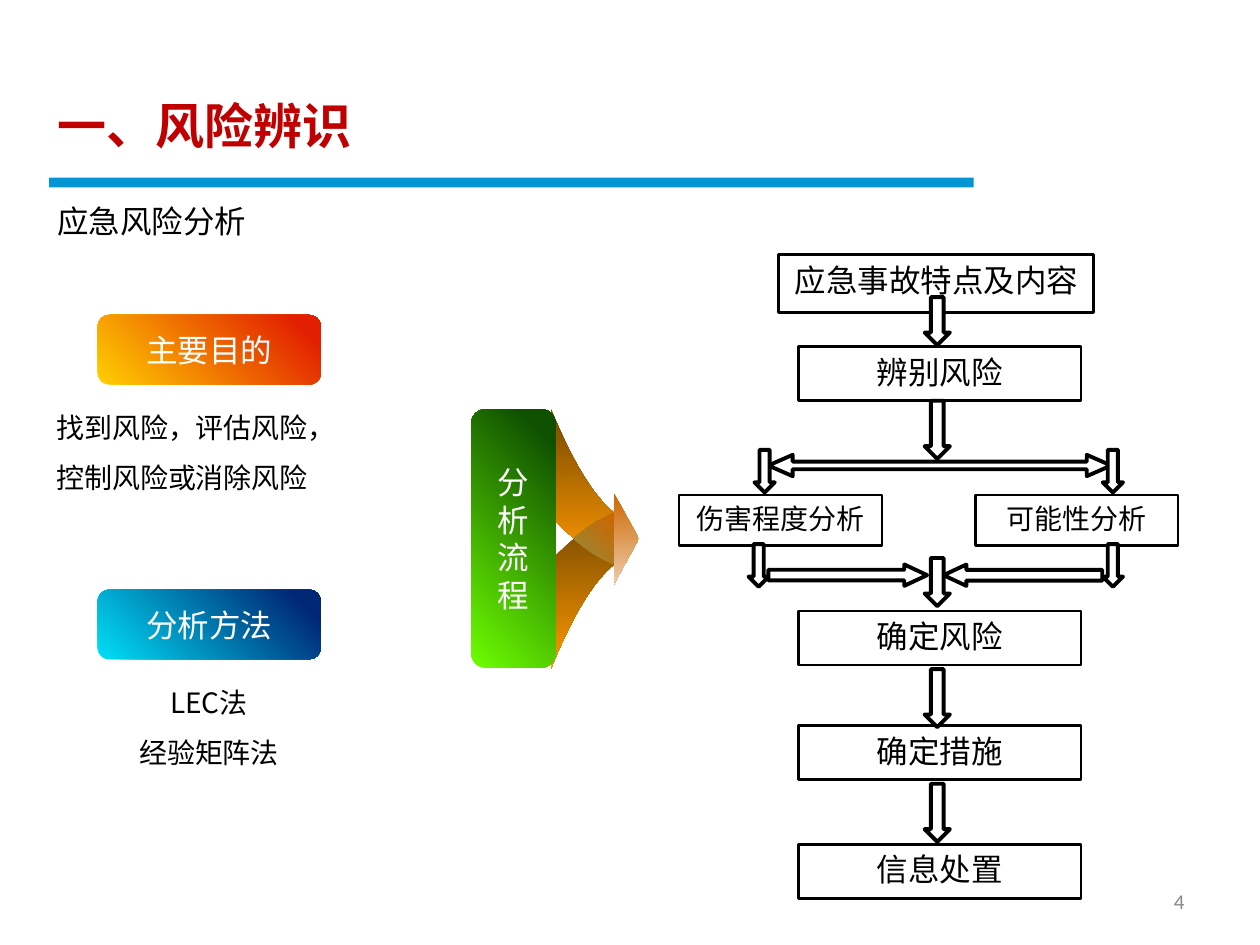
import pptx
import pptx.dml.color
import pptx.enum.shapes
import pptx.enum.text
import pptx.util
from lxml import etree

Cm = pptx.util.Cm
Pt = pptx.util.Pt
MSO_SHAPE = pptx.enum.shapes.MSO_SHAPE
ALIGN = pptx.enum.text.PP_ALIGN
ANCHOR = pptx.enum.text.MSO_ANCHOR

SANS = "Noto Sans CJK SC"
COLORS = {
    "title": "C00000", "bar": "0595D4", "text": "000000", "white": "FFFFFF",
    "number": "898989", "yellow": "FFCF01", "red": "E22000", "cyan": "00DFF6",
    "navy": "002774", "lime": "6EFF01", "green": "0F5000", "brown": "744700",
    "orange": "FF9900", "rust": "CC6600", "sand": "EECDAB", "olive": "948C3C",
}


def rgb(name):
    """Return the named colour."""
    return pptx.dml.color.RGBColor.from_string(COLORS[name])


def write(sp, text, size, color="text", font=SANS, align=ALIGN.CENTER,
          anchor=ANCHOR.TOP, bold=False, spacing=None, wrap=True):
    """Set the text of a shape and format all of it."""
    tf = sp.text_frame
    tf.text = text
    tf.word_wrap = wrap
    tf.auto_size = pptx.enum.text.MSO_AUTO_SIZE.NONE
    tf.vertical_anchor = anchor
    for p in tf.paragraphs:
        p.alignment = align
        if spacing:
            p.line_spacing = spacing
        for r in p.runs:
            r.font.size, r.font.bold, r.font.name = Pt(size), bold, font
            r.font.color.rgb = rgb(color)
            rPr = r.font._element
            ea = etree.SubElement(rPr, pptx.oxml.ns.qn("a:ea"))
            ea.set("typeface", SANS)


def add_text(s, box, text, size, **style):
    """Add a formatted text box."""
    sp = s.shapes.add_textbox(*map(Cm, box))
    write(sp, text, size, **style)


def add_shape(s, kind, box, fill=None, line=None, adj=()):
    """Add a preset shape with an optional fill and black outline."""
    sp = s.shapes.add_shape(kind, *map(Cm, box))
    sp.shadow.inherit = False
    for i, value in enumerate(adj):
        sp.adjustments[i] = value
    if fill:
        sp.fill.solid()
        sp.fill.fore_color.rgb = rgb(fill)
    else:
        sp.fill.background()
    if line:
        sp.line.color.rgb = rgb("text")
        sp.line.width = Pt(line)
    else:
        sp.line.fill.background()
    return sp


def shade(sp, start, end, angle, stop=1):
    """Give a shape a two-colour linear gradient."""
    sp.fill.gradient()
    sp.fill.gradient_angle = angle
    for gs, name, position in zip(sp.fill.gradient_stops, (start, end), (0, stop)):
        gs.color.rgb = rgb(name)
        gs.position = position


def add_badge(s, box, text, start, end):
    """Add a rounded gradient label."""
    sp = add_shape(s, MSO_SHAPE.ROUNDED_RECTANGLE, box, adj=[0.167])
    shade(sp, start, end, 45, 0.9)
    write(sp, text, 18, color="white", anchor=ANCHOR.MIDDLE)


def add_header(s, x, y):
    """Place the title, the rule below it and the subtitle."""
    title = s.shapes.title
    title.left, title.top, title.width, title.height = map(Cm, (x, y, 7.19, 2.01))
    write(title, "一、风险辨识", 28, color="title", align=ALIGN.LEFT,
          anchor=ANCHOR.MIDDLE, bold=True)
    add_shape(s, MSO_SHAPE.RECTANGLE, (x + 0.08, y + 2.06, 18.64, 0.2), "bar")
    add_text(s, (x, y + 2.42, 4.32, 1.02), "应急风险分析", 18,
             font="Arial", align=ALIGN.LEFT, wrap=False)


def add_topic(s, x, y, heading, body, start, end, align):
    """Place a heading badge with its explanation below."""
    add_badge(s, (x + 1.08, y, 4.5, 1.4), heading, start, end)
    add_text(s, (x, y + 1.46, 6.65, 2.31), body, 16, align=align, spacing=1.5)


def curve(p0, p1, p2, steps=16):
    """Return points along a quadratic curve."""
    return [tuple((1 - t) ** 2 * a + 2 * t * (1 - t) * b + t * t * c
                  for a, b, c in zip(p0, p1, p2))
            for t in (i / steps for i in range(steps + 1))]


def add_outline(s, x, y, points, start, end, angle):
    """Add a closed gradient outline from points relative to x and y."""
    pts = [(Cm(x + px), Cm(y + py)) for px, py in points]
    fb = s.shapes.build_freeform(*pts[0])
    fb.add_line_segments(pts[1:], close=True)
    sp = fb.convert_to_shape()
    sp.shadow.inherit = False
    sp.line.fill.background()
    shade(sp, start, end, angle)


def add_process_arrow(s, x, y):
    """Place the green label and the two wings that merge into an arrow."""
    mid = y + 2.61
    upper = (curve((1.6, -2.64), (2.24, -1.05), (2.87, -0.53))
             + curve((2.87, 0.51), (2.24, 0.23), (1.6, -0.46)))
    lower = [(px, -py) for px, py in upper]
    head = [(2.87, -0.93), (2.87, 0.93), (3.38, 0)]
    edge = curve((2.06, 0), (2.47, -0.36), (2.87, -0.51))
    overlap = edge + [(px, -py) for px, py in reversed(edge)]
    for points, start, end, angle in (
            (lower, "brown", "orange", 270), (head, "rust", "sand", 270),
            (upper, "brown", "orange", 270), (overlap, "olive", "rust", 45)):
        add_outline(s, x, mid, points, start, end, angle)
    add_badge(s, (x, y, 1.7, 5.21), "分析流程", "lime", "green")


def add_flow(s, x, y):
    """Place the flow chart of analysis steps and its block arrows."""
    steps = [("应急事故特点及内容", 2.01, 0, 6.35, 1.17, 18),
             ("伤害程度分析", 0, 4.85, 4.09, 1.02, 16),
             ("可能性分析", 5.97, 4.85, 4.09, 1.02, 16)]
    steps += [(text, 2.41, top, 5.69, 1.09, 18) for text, top in (
        ("辨别风险", 1.86), ("确定风险", 7.19), ("确定措施", 9.5), ("信息处置", 11.89))]
    for text, left, top, w, h, size in steps:
        sp = add_shape(s, MSO_SHAPE.RECTANGLE, (x + left, y + top, w, h), line=1.5)
        write(sp, text, size, font="Arial")

    def arrow(kind, left, top, w, h, adj=(0.5, 0.5)):
        """Add a white block arrow inside the chart."""
        return add_shape(s, kind, (x + left, y + top, w, h), "white", 2.25, adj)

    for top, h in ((0.86, 0.97), (2.95, 1.17), (8.36, 1.17), (10.67, 1.17)):
        arrow(MSO_SHAPE.DOWN_ARROW, 4.95, top, 0.51, h)
    arrow(MSO_SHAPE.LEFT_RIGHT_ARROW, 1.8, 4.04, 6.91, 0.43, (0.358, 1.14))
    for left, top in ((1.52, 3.94), (8.54, 3.94), (1.4, 5.84), (8.54, 5.84)):
        arrow(MSO_SHAPE.DOWN_ARROW, left, top, 0.41, 0.86)
    for left, turn in ((1.8, 0), (5.33, 180)):
        sp = arrow(MSO_SHAPE.RIGHT_ARROW, left, 6.25, 3.2, 0.43, (0.5, 1.069))
        sp.rotation = turn
    arrow(MSO_SHAPE.DOWN_ARROW, 4.95, 6.12, 0.51, 0.97)


def main():
    """Build the risk identification slide."""
    prs = pptx.Presentation()
    prs.slide_width, prs.slide_height = Cm(25.4), Cm(19.05)
    s = prs.slides.add_slide(prs.slide_layouts[5])
    add_header(s, 0.91, 1.52)
    add_flow(s, 13.69, 5.13)
    add_topic(s, 0.89, 6.35, "主要目的", "找到风险，评估风险，控制风险或消除风险",
              "yellow", "red", ALIGN.LEFT)
    add_topic(s, 0.89, 11.89, "分析方法", "LEC法\n经验矩阵法",
              "cyan", "navy", ALIGN.CENTER)
    add_process_arrow(s, 9.5, 8.25)
    add_text(s, (18.21, 17.65, 5.92, 1.02), "4", 12, color="number",
             font="Calibri", align=ALIGN.RIGHT, anchor=ANCHOR.MIDDLE)
    prs.save("out.pptx")


if __name__ == "__main__":
    main()
